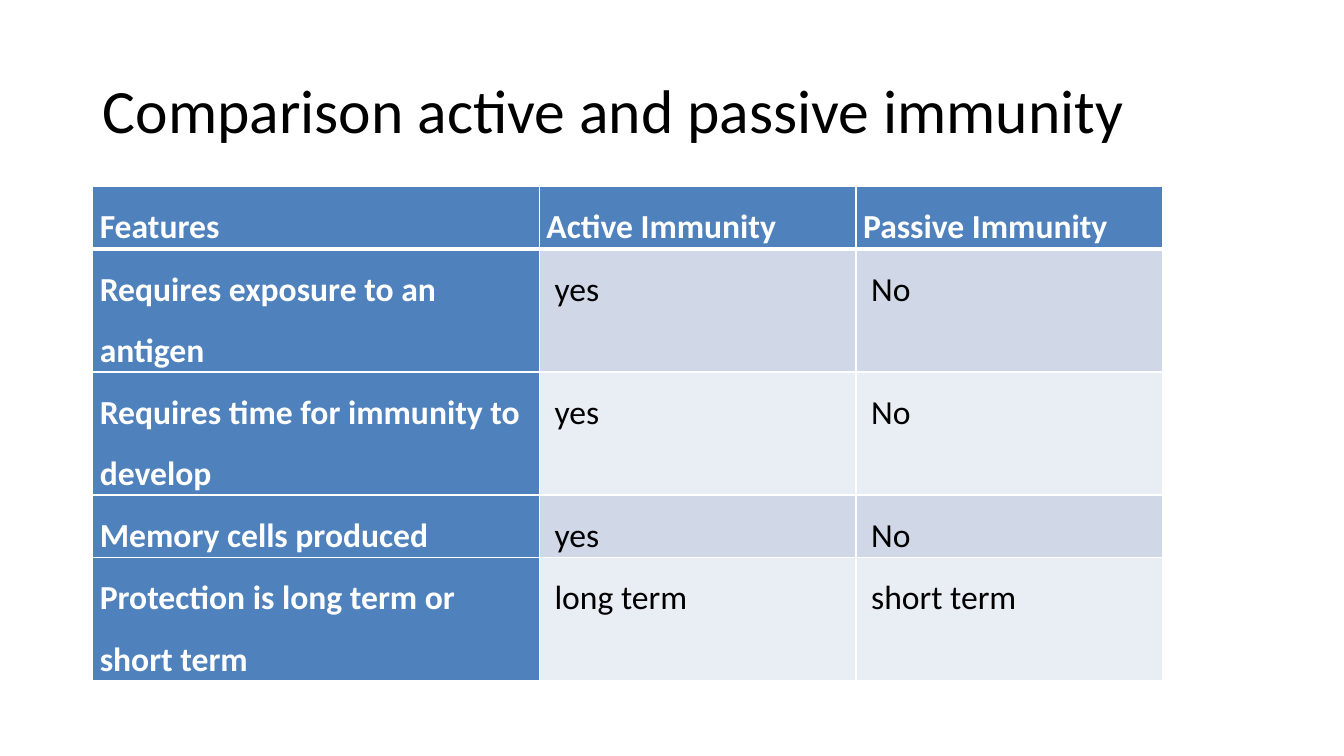
from lxml.etree import SubElement
from pptx import Presentation
from pptx.dml.color import RGBColor
from pptx.enum.text import MSO_ANCHOR as Anchor, PP_ALIGN as Align
from pptx.oxml.ns import qn
from pptx.util import Inches, Pt

COLORS = {
    "white": "FFFFFF",
    "black": "000000",
    "header": "4F81BD",
    "dark band": "D0D8E8",
    "light band": "E9EDF4",
}
ROWS = [
    ["Features", "Active Immunity", "Passive Immunity"],
    ["Requires exposure to an antigen", "yes", "No"],
    ["Requires time for immunity to develop", "yes", "No"],
    ["Memory cells produced", "yes", "No"],
    ["Protection is long term or short term", "long term", "short term"],
]
COLUMN_WIDTHS = [4.43, 3.14, 3.04]
ROW_HEIGHTS = [0.62, 1.2, 1.2, 0.62, 1.2]


def format_text(paragraph, color, font_format, paragraph_format):
    for name, value in paragraph_format.items():
        setattr(paragraph, name, value)
    font = paragraph.runs[0].font
    for name, value in font_format.items():
        setattr(font, name, value)
    font.name = "Calibri"
    font.color.rgb = RGBColor.from_string(COLORS[color])


def add_border(cell, side, width):
    properties = cell._tc.get_or_add_tcPr()
    line = SubElement(properties, qn(f"a:ln{side}"), w=str(Pt(width)))
    fill = SubElement(line, qn("a:solidFill"))
    SubElement(fill, qn("a:srgbClr"), val=COLORS["white"])


presentation = Presentation()
presentation.slide_width = Inches(13.33)
presentation.slide_height = Inches(7.5)
slide = presentation.slides.add_slide(presentation.slide_layouts[5])

# Title
title = slide.shapes.title
title.left, title.top = Inches(0.92), Inches(0.4)
title.width, title.height = Inches(11.5), Inches(1.45)
title.text_frame.text = "Comparison active and passive immunity"
title.text_frame.vertical_anchor = Anchor.MIDDLE
format_text(title.text_frame.paragraphs[0], "black", {"size": Pt(44)},
            {"alignment": Align.LEFT, "line_spacing": 0.9})

# Table grid
table = slide.shapes.add_table(
    len(ROWS), len(COLUMN_WIDTHS), Inches(0.92), Inches(1.85),
    Inches(sum(COLUMN_WIDTHS)), Inches(sum(ROW_HEIGHTS))).table
for column, width in zip(table.columns, COLUMN_WIDTHS):
    column.width = Inches(width)
for row, height in zip(table.rows, ROW_HEIGHTS):
    row.height = Inches(height)

# Cells: header row and first column are blue, the rest is banded
for row_index, texts in enumerate(ROWS):
    for column_index, text in enumerate(texts):
        cell = table.cell(row_index, column_index)
        is_header = row_index == 0 or column_index == 0
        band = "dark band" if row_index % 2 else "light band"

        # A thick line separates the header row from the body
        top = 3 if row_index == 1 else 1
        bottom = 3 if row_index == 0 else 1
        for side, width in zip("LRTB", [1, 1, top, bottom]):
            add_border(cell, side, width)
        cell.fill.solid()
        cell.fill.fore_color.rgb = RGBColor.from_string(
            COLORS["header" if is_header else band])

        cell.margin_left = Inches(0.07 if is_header else 0.15)
        cell.margin_right = Inches(0.07)
        cell.margin_top = cell.margin_bottom = 0
        cell.vertical_anchor = Anchor.TOP
        cell.text = text
        format_text(cell.text_frame.paragraphs[0],
                    "white" if is_header else "black",
                    {"size": Pt(24), "bold": is_header},
                    {"line_spacing": 1.5, "space_after": Pt(8)})

presentation.save("out.pptx")
